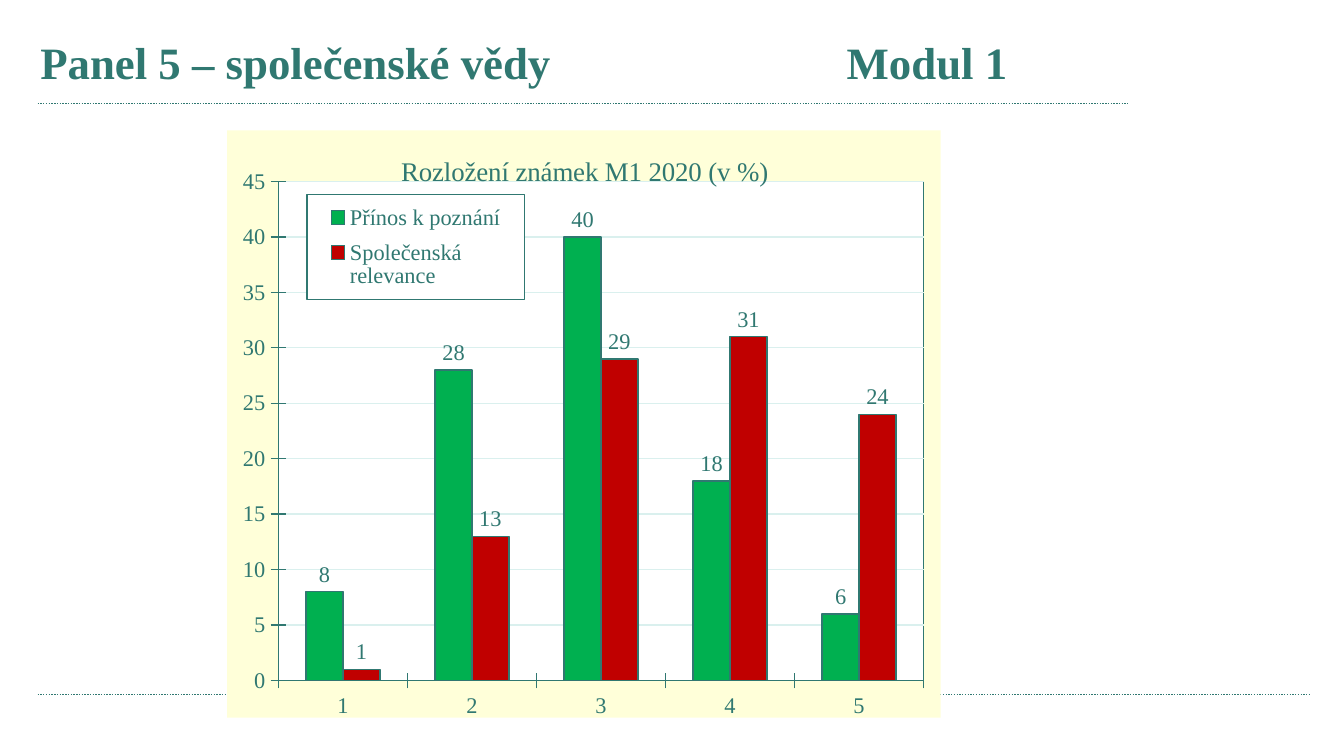
from lxml import etree
from pptx import Presentation
from pptx.chart.data import CategoryChartData
from pptx.dml.color import RGBColor
from pptx.enum.chart import XL_CHART_TYPE, XL_LABEL_POSITION, XL_LEGEND_POSITION, XL_TICK_MARK
from pptx.enum.dml import MSO_LINE
from pptx.enum.shapes import MSO_CONNECTOR
from pptx.enum.text import MSO_ANCHOR, MSO_AUTO_SIZE, PP_ALIGN
from pptx.oxml import parse_xml
from pptx.oxml.ns import nsdecls, qn
from pptx.util import Inches, Pt

COLUMNS = XL_CHART_TYPE.COLUMN_CLUSTERED
OUTSIDE_END = XL_LABEL_POSITION.OUTSIDE_END
LEGEND_RIGHT = XL_LEGEND_POSITION.RIGHT
CROSS = XL_TICK_MARK.CROSS
DOTTED = MSO_LINE.ROUND_DOT
STRAIGHT = MSO_CONNECTOR.STRAIGHT
MIDDLE = MSO_ANCHOR.MIDDLE
NO_FIT = MSO_AUTO_SIZE.NONE
LEFT = PP_ALIGN.LEFT

WIDTH = 10
HEIGHT = WIDTH * 9 / 16
FONT = "Times New Roman"
COLORS = {
    "teal": "307871", "grid": "DAF0EE", "cream": "FFFFD9",
    "white": "FFFFFF", "green": "00B050", "red": "C00000",
}
GRADES = ["1", "2", "3", "4", "5"]
SERIES = [
    ("Přínos k poznání", [8, 28, 40, 18, 6], "green"),
    ("Společenská relevance", [1, 13, 29, 31, 24], "red"),
]


def color(name):
    return RGBColor.from_string(COLORS[name])


def style_font(font, size, bold=False):
    font.name, font.size, font.bold = FONT, Pt(size), bold
    font.color.rgb = color("teal")


def style_line(line, name="teal"):
    line.color.rgb = color(name)
    line.width = Pt(0.75)


def add_rule(page, left, right, y):
    rule = page.shapes.add_connector(
        STRAIGHT, Inches(left), Inches(y), Inches(right), Inches(y))
    style_line(rule.line)
    rule.line.dash_style = DOTTED
    etree.SubElement(rule._element.spPr, qn("a:effectLst"))


def add_title(page, box):
    title = page.shapes.title
    title.left, title.top, title.width, title.height = map(Inches, box)
    frame = title.text_frame
    frame.auto_size, frame.vertical_anchor = NO_FIT, MIDDLE
    frame.margin_bottom = Inches(0.1)
    para = frame.paragraphs[0]
    para.text = "Panel 5 – společenské vědy\t\t\tModul 1"
    para.alignment = LEFT
    tabs = etree.SubElement(para._p.get_or_add_pPr(), qn("a:tabLst"))
    for inch in (4, 5, 6):
        etree.SubElement(tabs, qn("a:tab"), pos=str(Inches(inch)), algn="l")
    style_font(para.font, 24, bold=True)


def set_layout(element, index, inner=False, **percents):
    """Place a chart part by percentages of the chart's size."""
    for old in element.findall(qn("c:layout")):
        element.remove(old)
    layout = etree.Element(qn("c:layout"))
    manual = etree.SubElement(layout, qn("c:manualLayout"))
    if inner:
        etree.SubElement(manual, qn("c:layoutTarget"), val="inner")
    for side in ("x", "y"):
        etree.SubElement(manual, qn(f"c:{side}Mode"), val="edge")
    for side, percent in percents.items():
        etree.SubElement(manual, qn(f"c:{side}"), val=f"{percent / 100:.3f}")
    element.insert(index, layout)


def area_format(fill, border=None):
    """Fill and border for a chart area."""
    stroke = f'<a:solidFill><a:srgbClr val="{COLORS[border]}"/></a:solidFill>' if border else "<a:noFill/>"
    return parse_xml(
        f'<c:spPr {nsdecls("c", "a")}><a:solidFill><a:srgbClr val="{COLORS[fill]}"/>'
        f'</a:solidFill><a:ln w="{Pt(0.75)}">{stroke}</a:ln></c:spPr>')


def format_axes(chart):
    for axis in (chart.category_axis, chart.value_axis):
        axis.major_tick_mark = CROSS
        style_font(axis.tick_labels.font, 12)
        style_line(axis.format.line)
    values = chart.value_axis
    values.minimum_scale, values.maximum_scale, values.major_unit = 0, 45, 5
    values.tick_labels.number_format = "0"
    values.tick_labels.number_format_is_linked = False
    style_line(values.major_gridlines.format.line, "grid")


def format_series(plot):
    plot.gap_width, plot.overlap, plot.vary_by_categories = 150, 0, False
    for series, (_, _, fill) in zip(plot.series, SERIES):
        series.format.fill.solid()
        series.format.fill.fore_color.rgb = color(fill)
        style_line(series.format.line)
        labels = series.data_labels
        labels.show_value, labels.position = True, OUTSIDE_END
        labels.number_format, labels.number_format_is_linked = "#,##0", False
        style_font(labels.font, 12)


def add_grade_chart(page, box):
    data = CategoryChartData()
    data.categories = GRADES
    for name, values, _ in SERIES:
        data.add_series(name, values)
    chart = page.shapes.add_chart(COLUMNS, *map(Inches, box), data).chart
    style_font(chart.font, 12)
    format_axes(chart)
    format_series(chart.plots[0])

    # Chart title
    chart.has_title = True
    para = chart.chart_title.text_frame.paragraphs[0]
    para.text = "Rozložení známek M1 2020 (v %)"
    style_font(para.font, 14.4)
    set_layout(chart.chart_title._element, 1, x=23.7, y=3.3)

    # Legend over the plot
    chart.has_legend = True
    legend = chart.legend
    legend.position, legend.include_in_layout = LEGEND_RIGHT, False
    style_font(legend.font, 12)
    set_layout(legend._element, 1, x=11.2, y=10.9, w=30.5, h=17.9)
    legend._element.find(qn("c:overlay")).addnext(area_format("white", "teal"))

    # Plot and chart backgrounds
    body = chart._chartSpace.find(qn("c:chart"))
    plot_area = body.find(qn("c:plotArea"))
    set_layout(plot_area, 0, inner=True, x=7.2, y=8.7, w=90.4, h=85)
    plot_area.append(area_format("white", "teal"))
    body.addnext(area_format("cream"))


def main():
    deck = Presentation()
    deck.slide_width, deck.slide_height = Inches(WIDTH), Inches(HEIGHT)
    page = deck.slides.add_slide(deck.slide_layouts[5])
    add_rule(page, 0.28, 8.39, 0.77)
    add_rule(page, 0.28, 9.75, 5.17)
    add_title(page, (0.2, 0.21, 8.11, 0.55))
    add_grade_chart(page, (1.69, 0.97, 5.31, 4.37))
    deck.save("out.pptx")


if __name__ == "__main__":
    main()
